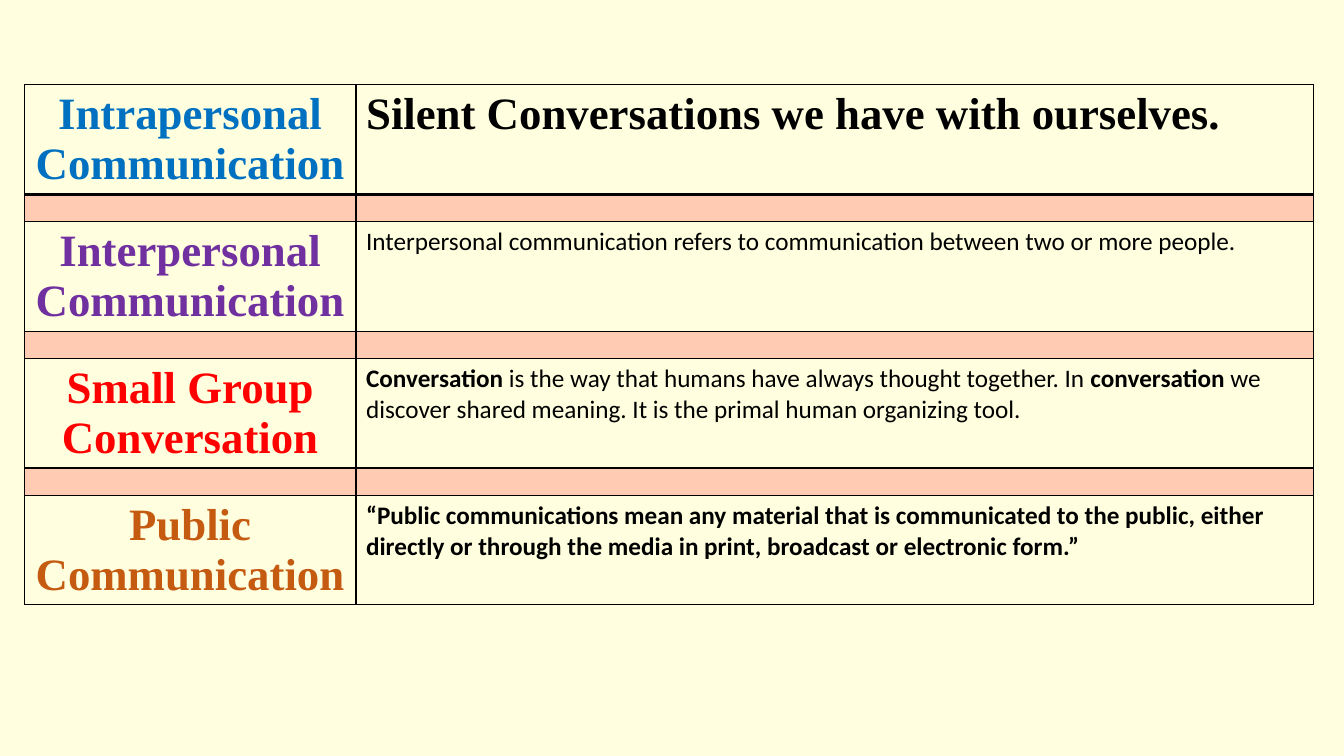
from dataclasses import dataclass

from lxml.etree import SubElement
from pptx import Presentation
from pptx.dml.color import RGBColor
from pptx.enum.text import PP_ALIGN
from pptx.oxml.ns import qn
from pptx.util import Pt


@dataclass(frozen=True)
class Theme:
    background: str = "FFFFE0"
    separator: str = "FFCCB3"
    ink: str = "000000"
    intrapersonal: str = "0070C0"
    interpersonal: str = "7030A0"
    small_group: str = "FF0000"
    public: str = "C55A11"
    heading_font: str = "Times New Roman"
    body_font: str = "Calibri"
    heading_size: float = 32
    body_size: float = 18
    separator_size: float = 10


THEME = Theme()
TOPIC_HEIGHT = 78
SEPARATOR_HEIGHT = 19.4
HEADING = {"name": THEME.heading_font, "size": Pt(THEME.heading_size), "bold": True}
BODY = {"name": THEME.body_font, "size": Pt(THEME.body_size), "bold": False}
STRONG = {**BODY, "bold": True}

TOPICS = [
    ("Intrapersonal Communication", THEME.intrapersonal,
     [("Silent Conversations we have with ourselves.", HEADING)]),
    ("Interpersonal Communication", THEME.interpersonal,
     [("Interpersonal communication refers to communication between two or more people.", BODY)]),
    ("Small Group Conversation", THEME.small_group,
     [("Conversation", STRONG),
      (" is the way that humans have always thought together. In ", BODY),
      ("conversation", STRONG),
      (" we discover shared meaning. It is the primal human organizing tool.", BODY)]),
    ("Public Communication", THEME.public,
     [("“Public communications mean any material that is communicated to the public, "
       "either directly or through the media in print, broadcast or electronic form.”", STRONG)]),
]


class SlideBuilder:
    def __init__(self, presentation, theme):
        self.theme = theme
        self.slide = presentation.slides.add_slide(presentation.slide_layouts[6])
        backdrop = self.slide.background.fill
        backdrop.solid()
        backdrop.fore_color.rgb = RGBColor.from_string(theme.background)

    def table(self, left, top, widths, heights):
        grid = self.slide.shapes.add_table(
            len(heights), len(widths), Pt(left), Pt(top), Pt(sum(widths)), Pt(sum(heights))
        ).table
        for flag, state in {"first_row": False, "horz_banding": False}.items():
            setattr(grid, flag, state)
        for column, width in zip(grid.columns, widths):
            column.width = Pt(width)
        for row, height in zip(grid.rows, heights):
            row.height = Pt(height)
        return grid

    def borders(self, cell, top=1, bottom=1):
        properties = cell._tc.get_or_add_tcPr()
        for side, weight in {"lnL": 1, "lnR": 1, "lnT": top, "lnB": bottom}.items():
            edge = SubElement(properties, qn(f"a:{side}"), w=str(Pt(weight)))
            SubElement(SubElement(edge, qn("a:solidFill")), qn("a:srgbClr"), val=self.theme.ink)

    def text(self, cell, passages, color, align=PP_ALIGN.LEFT):
        cell.fill.background()
        paragraph = cell.text_frame.paragraphs[0]
        paragraph.alignment = align
        for words, style in passages:
            run = paragraph.add_run()
            run.text = words
            run.font.color.rgb = RGBColor.from_string(color)
            for attribute, setting in style.items():
                setattr(run.font, attribute, setting)

    def separator(self, cell):
        cell.fill.solid()
        cell.fill.fore_color.rgb = RGBColor.from_string(self.theme.separator)
        SubElement(cell.text_frame.paragraphs[0]._p, qn("a:endParaRPr"),
                   sz=str(int(self.theme.separator_size * 100)))


def main():
    presentation = Presentation()
    presentation.slide_width, presentation.slide_height = Pt(960), Pt(540)
    builder = SlideBuilder(presentation, THEME)
    heights = [TOPIC_HEIGHT, SEPARATOR_HEIGHT] * (len(TOPICS) - 1) + [TOPIC_HEIGHT]
    overview = builder.table(17.4, 60.6, [236.9, 684], heights)

    for index in range(len(heights)):
        heading, definition = overview.cell(index, 0), overview.cell(index, 1)
        for cell in (heading, definition):
            builder.borders(cell, top=2 if index == 1 else 1, bottom=2 if index == 0 else 1)
        if index % 2:
            builder.separator(heading)
            builder.separator(definition)
        else:
            title, color, passages = TOPICS[index // 2]
            builder.text(heading, [(title, HEADING)], color, PP_ALIGN.CENTER)
            builder.text(definition, passages, THEME.ink)

    presentation.save("out.pptx")


if __name__ == "__main__":
    main()
